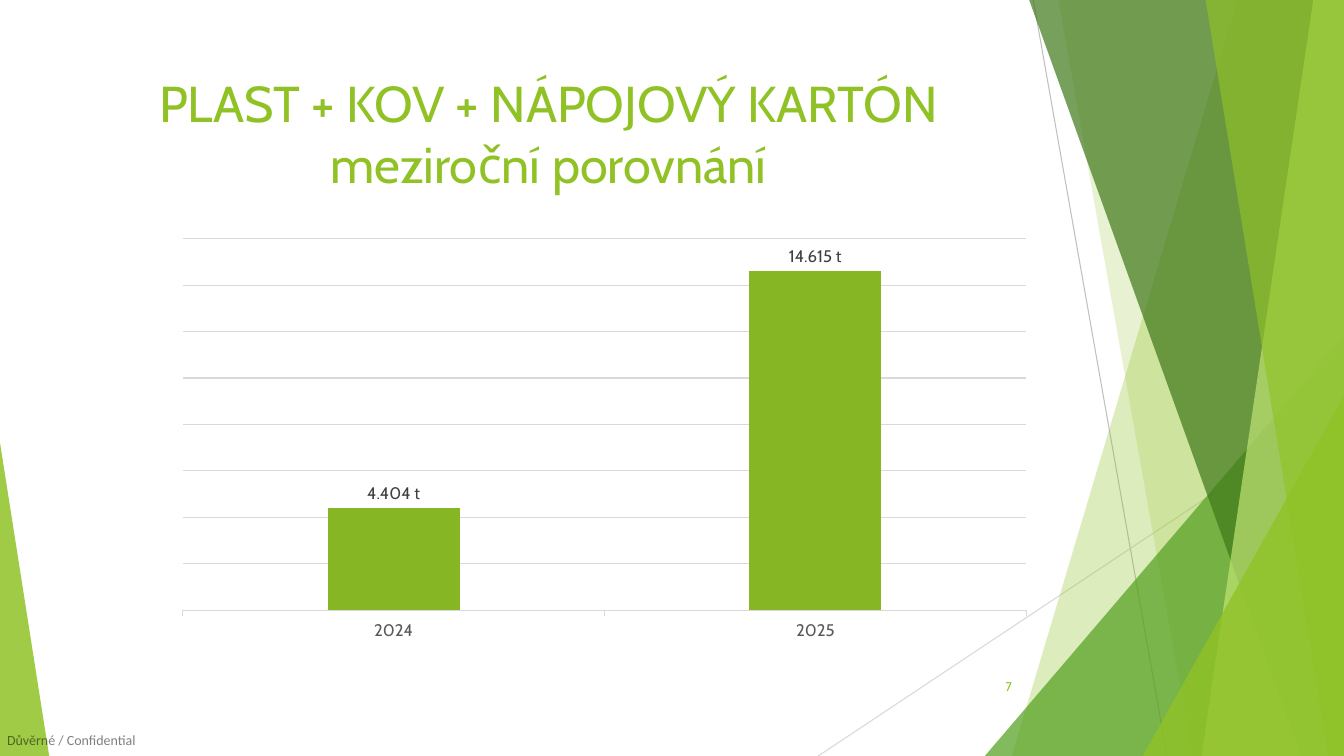
"""Builds the slide comparing yearly plastic, metal and carton collection."""
from lxml.etree import SubElement
from pptx import Presentation
from pptx.chart.data import CategoryChartData
from pptx.dml.color import RGBColor
from pptx.enum.chart import XL_CHART_TYPE as ChartType, XL_LABEL_POSITION as LabelPosition
from pptx.enum.chart import XL_TICK_LABEL_POSITION as TickLabels, XL_TICK_MARK as TickMark
from pptx.enum.shapes import MSO_CONNECTOR as Connector, MSO_SHAPE as Shape
from pptx.enum.text import MSO_ANCHOR as Anchor, MSO_AUTO_SIZE as AutoSize, PP_ALIGN as Align
from pptx.oxml import parse_xml
from pptx.oxml.ns import nsdecls, qn
from pptx.util import Cm, Pt

WIDTH, HEIGHT = 33.87, 19.05
GREEN, GRID = "90C226", "D9D9D9"
TONNES = '0.000" t"'


def paint(color_format, colour, opacity=100):
    color_format.rgb = RGBColor.from_string(colour)
    if opacity < 100:
        for value in color_format._xFill.iter(qn("a:srgbClr")):
            SubElement(value, qn("a:alpha"), val=str(opacity * 1000))


class SlideBuilder:
    """Holds the font and the current slide and adds its elements."""

    def __init__(self, page, font):
        self.page, self.font = page, font

    def style(self, font, size, colour, opacity=100, name=None):
        font.name, font.size = name or self.font, Pt(size)
        font.fill.solid()
        paint(font.color, colour, opacity)

    def outline(self, line, colour):
        line.width = Pt(0.75)
        line.fill.solid()
        paint(line.color, colour)

    def line(self, start, end, colour):
        line = self.page.shapes.add_connector(
            Connector.STRAIGHT, *(Cm(value) for value in start + end))
        self.outline(line.line, colour)
        SubElement(line._element.spPr, qn("a:effectLst"))

    def fill(self, shape, colour, opacity):
        shape.shadow.inherit = False
        shape.line.fill.background()
        shape.fill.solid()
        paint(shape.fill.fore_color, colour, opacity)

    def band(self, top_x, bottom_x, colour, opacity):
        top = Cm(-0.02)
        outline = self.page.shapes.build_freeform(Cm(top_x), top)
        outline.add_line_segments([(Cm(WIDTH), top), (Cm(WIDTH), Cm(HEIGHT)),
                                   (Cm(bottom_x), Cm(HEIGHT))])
        self.fill(outline.convert_to_shape(), colour, opacity)

    def triangle(self, left, width, height, apex, colour, opacity):
        shape = self.page.shapes.add_shape(
            Shape.ISOSCELES_TRIANGLE, Cm(left), Cm(HEIGHT - height), Cm(width), Cm(height))
        shape.adjustments[0] = apex
        self.fill(shape, colour, opacity)

    def set_text(self, box, text, size, colour, align, anchor=Anchor.TOP, **look):
        frame = box.text_frame
        frame.text = text
        frame.word_wrap, frame.auto_size = True, AutoSize.NONE
        frame.vertical_anchor = anchor
        para = frame.paragraphs[0]
        para.alignment = align
        for span in para.runs:
            self.style(span.font, size, colour, **look)

    def title(self, area, text):
        box = self.page.shapes.title
        box.left, box.top, box.width, box.height = (Cm(value) for value in area)
        self.set_text(box, text, 36, GREEN, Align.CENTER)

    def text(self, area, text, size, colour, align, inset=True, **look):
        box = self.page.shapes.add_textbox(*(Cm(value) for value in area))
        self.set_text(box, text, size, colour, align, **look)
        if not inset:
            frame = box.text_frame
            frame.margin_left = frame.margin_right = frame.margin_top = frame.margin_bottom = 0
            frame.word_wrap = False

    def column_chart(self, area, categories, values, colour, plot_area):
        data = CategoryChartData(number_format=TONNES)
        data.categories = categories
        data.add_series("Series 1", values)
        chart = self.page.shapes.add_chart(
            ChartType.COLUMN_CLUSTERED, *(Cm(value) for value in area), data).chart
        chart.has_legend = chart.has_title = False
        self.style(chart.font, 10, "000000")

        years = chart.category_axis
        years.major_tick_mark = TickMark.OUTSIDE
        years.tick_label_position = TickLabels.LOW
        self.style(years.tick_labels.font, 12, "595959")
        self.outline(years.format.line, GRID)

        weights = chart.value_axis
        weights.minimum_scale, weights.maximum_scale, weights.major_unit = 0, 16, 2
        weights.visible = False
        self.outline(weights.major_gridlines.format.line, GRID)

        plot = chart.plots[0]
        plot.gap_width, plot.overlap, plot.vary_by_categories = 219, -27, False
        series = plot.series[0]
        series.format.fill.solid()
        paint(series.format.fill.fore_color, colour)
        labels = series.data_labels
        labels.show_value, labels.position = True, LabelPosition.OUTSIDE_END
        labels.number_format, labels.number_format_is_linked = TONNES, False
        self.style(labels.font, 12, "404040")
        self.place_plot(chart, plot_area)

    def place_plot(self, chart, plot_area):
        area = chart._chartSpace.chart.plotArea
        for old in area.findall(qn("c:layout")):
            area.remove(old)
        sizes = "".join(f'<c:{key} val="{value}"/>' for key, value in zip("xywh", plot_area))
        area.insert(0, parse_xml(
            f'<c:layout {nsdecls("c")}><c:manualLayout><c:layoutTarget val="inner"/>'
            f'<c:xMode val="edge"/><c:yMode val="edge"/>{sizes}</c:manualLayout></c:layout>'))


def main():
    deck = Presentation()
    deck.slide_width, deck.slide_height = Cm(WIDTH), Cm(HEIGHT)
    slide = SlideBuilder(deck.slides.add_slide(deck.slide_layouts[5]), "Cabin")

    slide.line((26.04, 0), (29.41, HEIGHT), "BFBFBF")
    slide.line((WIDTH, 10.24), (20.62, HEIGHT), GRID)
    slide.band(31.19, 25.5, GREEN, 30)
    slide.band(26.67, 30.05, GREEN, 20)
    slide.triangle(24.82, 9.05, 10.59, 1, "54A021", 72)
    slide.band(25.93, 32.79, "3F7819", 70)
    slide.band(33.1, 30.28, "C0E474", 70)
    slide.band(30.38, 33.48, GREEN, 65)
    slide.triangle(28.8, 5.07, 9.07, 1, GREEN, 80)
    slide.triangle(0, 1.24, 7.9, 0, GREEN, 85)

    slide.text((0.18, 18.44, 3.33, 0.43), "Důvěrné / Confidential", 10, "000000",
               Align.LEFT, inset=False, opacity=50, name="Calibri")
    slide.title((1.88, 1.7, 23.88, 3.66), "PLAST + KOV + NÁPOJOVÝ KARTÓN\vmeziroční porovnání")
    slide.text((23.85, 16.79, 1.9, 1.02), "7", 9, GREEN, Align.RIGHT, anchor=Anchor.MIDDLE)
    slide.column_chart((2.46, 5.69, 23.88, 10.77), ["2024", "2025"], [4.404, 14.615],
                       "87B624", (0.09, 0.03, 0.89, 0.87))
    deck.save("out.pptx")


if __name__ == "__main__":
    main()
